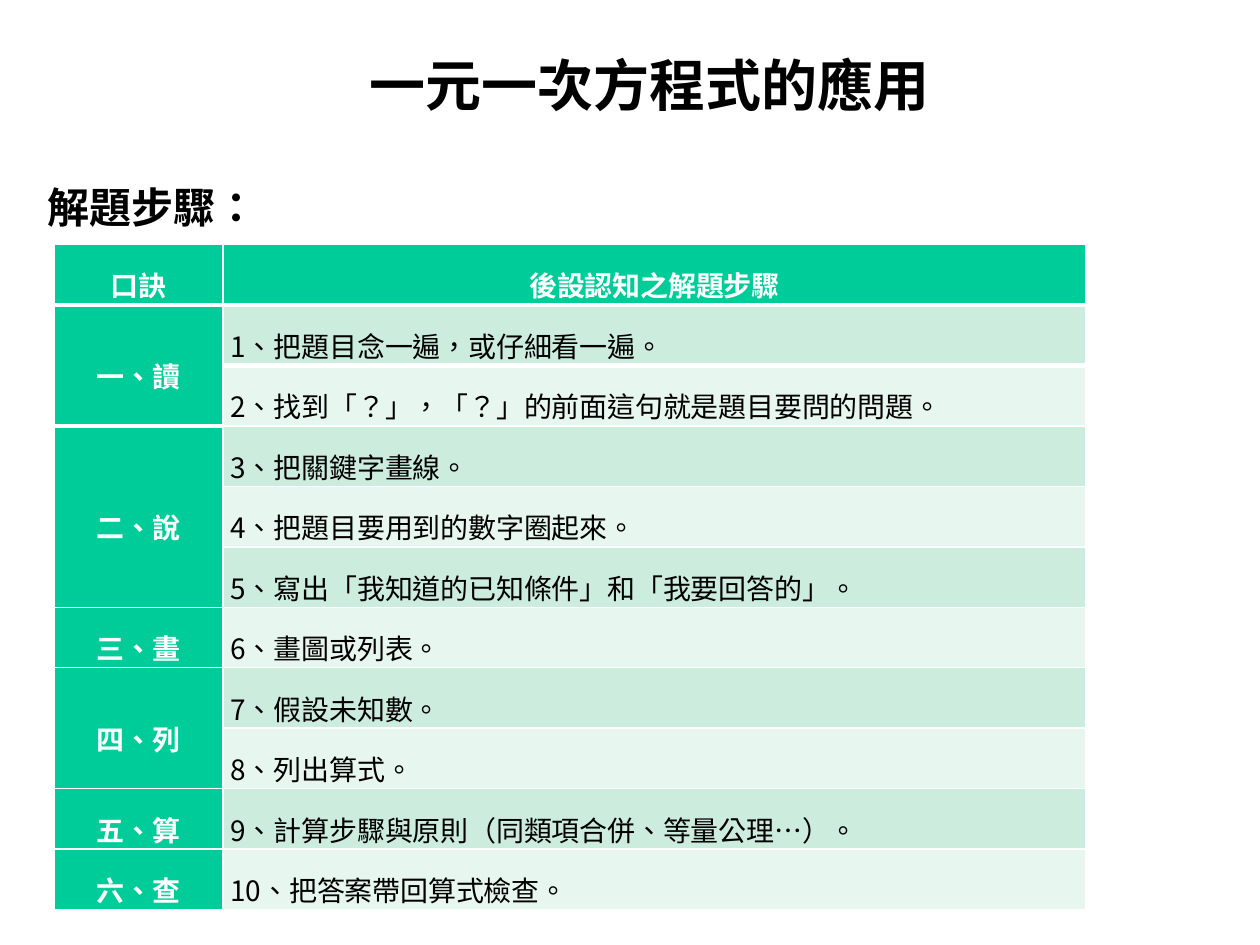
from lxml.etree import SubElement
from pptx import Presentation
from pptx.dml.color import RGBColor
from pptx.enum.text import MSO_ANCHOR, PP_ALIGN
from pptx.oxml.ns import qn
from pptx.util import Inches, Pt

FONT = "Noto Sans CJK SC"
COLORS = {"ink": "000000", "white": "FFFFFF", "header": "00CC99",
          "odd": "CCECDE", "even": "E7F6EF"}
FORMATS = {
    "title": {"size": Pt(32), "bold": True},
    "heading": {"size": Pt(24), "bold": True},
    "label": {"size": Pt(16), "bold": True},
    "step": {"size": Pt(16), "bold": False},
}

HEADINGS = ("口訣", "後設認知之解題步驟")
# Each keyword covers one or more numbered steps
STEPS = {
    "讀": ["把題目念一遍，或仔細看一遍。",
          "找到「？」，「？」的前面這句就是題目要問的問題。"],
    "說": ["把關鍵字畫線。", "把題目要用到的數字圈起來。",
          "寫出「我知道的已知條件」和「我要回答的」。"],
    "畫": ["畫圖或列表。"],
    "列": ["假設未知數。", "列出算式。"],
    "算": ["計算步驟與原則（同類項合併、等量公理…）。"],
    "查": ["把答案帶回算式檢查。"],
}
ORDINALS = "一二三四五六"
HANGING = {1: 0.25, 2: 0.25, 9: 0.32}


def write(frame, text, style, color, align=PP_ALIGN.LEFT, tight=False):
    """Put one formatted line into a text frame and return its paragraph."""
    para = frame.paragraphs[0]
    para.alignment = align
    span = para.add_run()
    span.text = text
    for name, value in FORMATS[style].items():
        setattr(span.font, name, value)
    span.font.name = FONT
    span.font.color.rgb = RGBColor.from_string(COLORS[color])
    properties = span._r.get_or_add_rPr()
    properties.set("lang", "zh-TW")
    if tight:
        properties.set("spc", "-5")
    east_asian = properties.makeelement(qn("a:ea"), {"typeface": FONT})
    properties.find(qn("a:latin")).addnext(east_asian)
    return para


def place(shape, box):
    shape.left, shape.top, shape.width, shape.height = map(Inches, box)


def add_title(page, box):
    title = page.shapes.title
    place(title, box)
    title.text_frame.vertical_anchor = MSO_ANCHOR.MIDDLE
    write(title.text_frame, "一元一次方程式的應用", "title", "ink")


def add_heading(page, box):
    heading = page.shapes.add_textbox(*map(Inches, box))
    heading.text_frame.word_wrap = True
    write(heading.text_frame, "解題步驟：", "heading", "ink")


def set_border(cell, side, width):
    """Draw one white cell edge; borders come before the fill."""
    properties = cell._tc.get_or_add_tcPr()
    line = properties.makeelement(qn(f"a:{side}"), {"w": str(Pt(width))})
    fill = SubElement(line, qn("a:solidFill"))
    SubElement(fill, qn("a:srgbClr"), val=COLORS["white"])
    properties.insert(0, line)


def fill_cell(cell, text, style, color, fill, align, tight=False):
    cell.fill.solid()
    cell.fill.fore_color.rgb = RGBColor.from_string(COLORS[fill])
    cell.vertical_anchor = MSO_ANCHOR.MIDDLE
    cell.margin_left = cell.margin_right = Inches(0.06)
    cell.margin_top = 0
    cell.margin_bottom = 0 if cell.is_merge_origin else Inches(0.03)
    para = write(cell.text_frame, text, style, color, align, tight)
    para.line_spacing = 1.5
    return para


def add_steps_table(page, box):
    row_count = 1 + sum(map(len, STEPS.values()))
    table = page.shapes.add_table(row_count, 2, *map(Inches, box)).table
    table.first_col = True
    label_width = 1.34
    table.columns[0].width = Inches(label_width)
    table.columns[1].width = Inches(box[2] - label_width)

    # Header row with a thick rule below
    for column, text in enumerate(HEADINGS):
        fill_cell(table.cell(0, column), text, "label", "white", "header",
                  PP_ALIGN.CENTER, tight=column == 1)
        set_border(table.cell(0, column), "lnB", 3)
        set_border(table.cell(1, column), "lnT", 3)

    # Keywords on the left, numbered steps on the right
    number = 1
    for ordinal, (keyword, steps) in zip(ORDINALS, STEPS.items()):
        label = table.cell(number, 0)
        if len(steps) > 1:
            label.merge(table.cell(number + len(steps) - 1, 0))
        fill_cell(label, f"{ordinal}、{keyword}", "label", "white", "header",
                  PP_ALIGN.CENTER)
        for step in steps:
            para = fill_cell(table.cell(number, 1), f"{number}、{step}", "step", "ink",
                             "odd" if number % 2 else "even", PP_ALIGN.JUSTIFY, tight=True)
            if number in HANGING:
                indent = Inches(HANGING[number])
                properties = para._p.get_or_add_pPr()
                properties.set("marL", str(indent))
                properties.set("indent", str(-indent))
            number += 1


def main():
    deck = Presentation()
    deck.slide_width, deck.slide_height = Inches(10), Inches(7.5)
    page = deck.slides.add_slide(deck.slide_layouts[5])
    add_heading(page, (0.28, 1.39, 2.07, 0.47))
    add_steps_table(page, (0.43, 1.94, 8.19, 5.28))
    add_title(page, (2.83, 0.33, 6.42, 0.67))
    deck.save("out.pptx")


if __name__ == "__main__":
    main()
